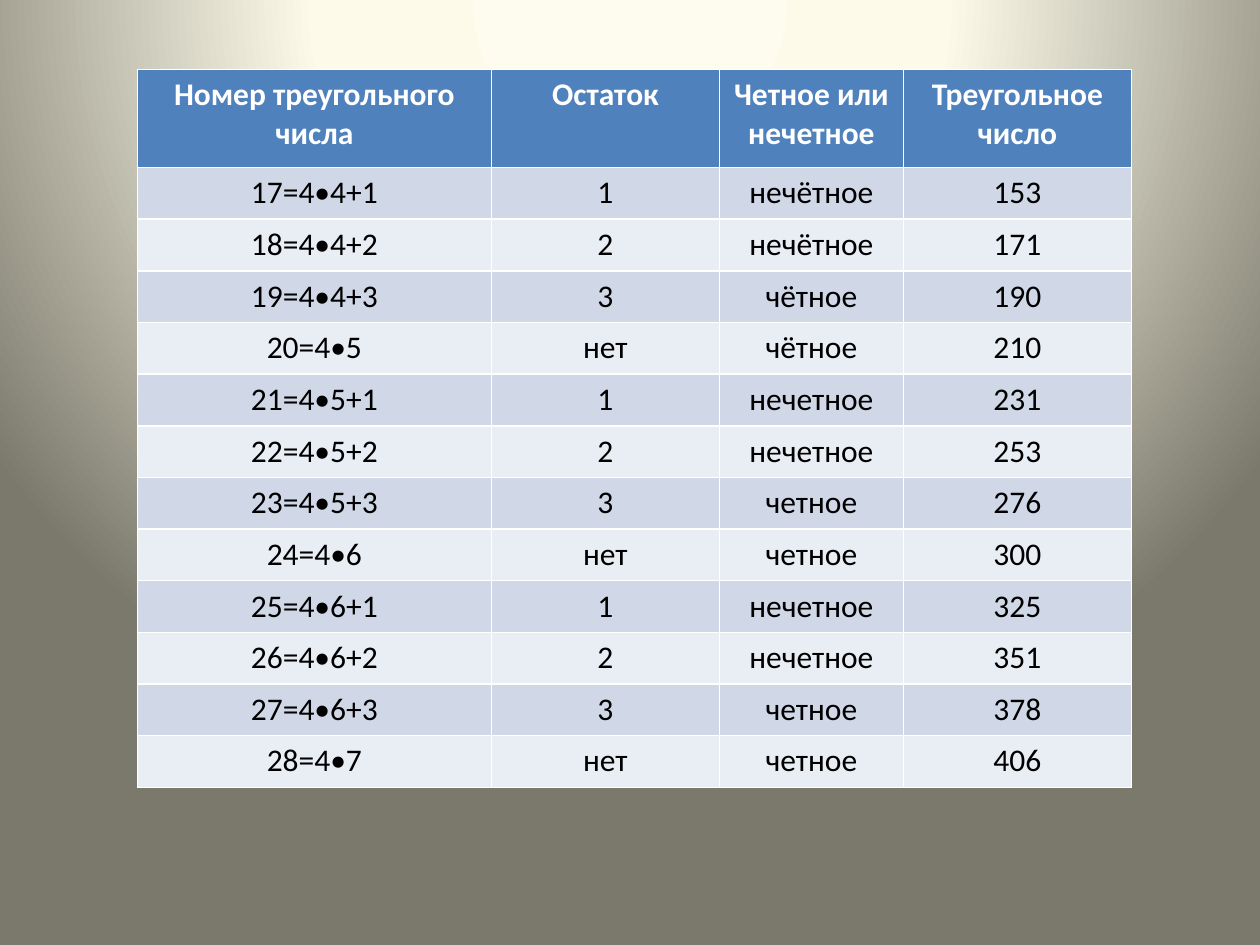
from pptx import Presentation
from pptx import util as u
from pptx.dml.color import RGBColor
from pptx.enum import text
from pptx.oxml import parse_xml
from pptx.oxml.ns import nsdecls

WHITE = RGBColor(0xFF, 0xFF, 0xFF)
BLACK = RGBColor(0, 0, 0)
BLUE = RGBColor(0x4F, 0x81, 0xBD)
BANDS = RGBColor(0xD0, 0xD8, 0xE8), RGBColor(0xE9, 0xED, 0xF4)
CREAM = RGBColor(0xFE, 0xFC, 0xEE)
IVORY = RGBColor(0xFD, 0xFA, 0xEA)
OLIVE = RGBColor(0x7B, 0x79, 0x6B)

HEADS = "Номер треугольного числа", "Остаток", "Четное или нечетное", "Треугольное число"
FIRST, LAST = 17, 28
WIDTHS = 2.81, 1.81, 1.46, 1.81
HEAD_H, ROW_H = 0.78, 0.41


def paint_back(slide):
    """Fill the background with a round gradient centred on the top edge."""
    stops = "".join(
        f'<a:gs pos="{pos * 1000}"><a:srgbClr val="{color}"/></a:gs>'
        for pos, color in ((0, CREAM), (40, IVORY), (100, OLIVE)))
    back = parse_xml(
        f'<p:bg {nsdecls("p", "a")}><p:bgPr><a:gradFill rotWithShape="1">'
        f'<a:gsLst>{stops}</a:gsLst><a:path path="circle">'
        '<a:fillToRect l="50000" t="-80000" r="50000" b="180000"/></a:path>'
        '</a:gradFill><a:effectLst/></p:bgPr></p:bg>')
    slide.element.cSld.insert(0, back)


def make_row(num):
    """Return the cell texts for one triangular number."""
    whole, rest = divmod(num, 4)
    value = num * (num + 1) // 2
    stem = "чётное" if num <= 20 else "четное"
    parity = f"не{stem}" if value % 2 else stem
    label = f"{num}=4•{whole}" + (f"+{rest}" if rest else "")
    return label, str(rest or "нет"), parity, str(value)


def fill_cell(cell, words, fill, color, bold):
    """Write centred words in a cell and colour it."""
    cell.fill.solid()
    cell.fill.fore_color.rgb = fill
    cell.text_frame.text = words
    para = cell.text_frame.paragraphs[0]
    para.alignment = text.PP_ALIGN.CENTER
    font = para.runs[0].font
    font.name, font.size, font.bold = "Calibri", u.Pt(18), bold
    font.color.rgb = color


def add_grid(slide, left, top):
    """Place the table of triangular numbers."""
    rows = [HEADS] + [make_row(num) for num in range(FIRST, LAST + 1)]
    heights = [HEAD_H] + [ROW_H] * (len(rows) - 1)
    table = slide.shapes.add_table(
        len(rows), len(HEADS), u.Inches(left), u.Inches(top),
        u.Inches(sum(WIDTHS)), u.Inches(sum(heights))).table
    for col, width in zip(table.columns, WIDTHS):
        col.width = u.Inches(width)
    for i, (row, height) in enumerate(zip(rows, heights)):
        table.rows[i].height = u.Inches(height)
        style = (BANDS[(i - 1) % 2], BLACK, False) if i else (BLUE, WHITE, True)
        for j, words in enumerate(row):
            fill_cell(table.cell(i, j), words, *style)


def main():
    """Build and save the slide."""
    deck = Presentation()
    deck.slide_width, deck.slide_height = u.Inches(10), u.Inches(7.5)
    slide = deck.slides.add_slide(deck.slide_layouts[6])
    paint_back(slide)
    add_grid(slide, 1.09, 0.55)
    deck.save("out.pptx")


if __name__ == "__main__":
    main()
